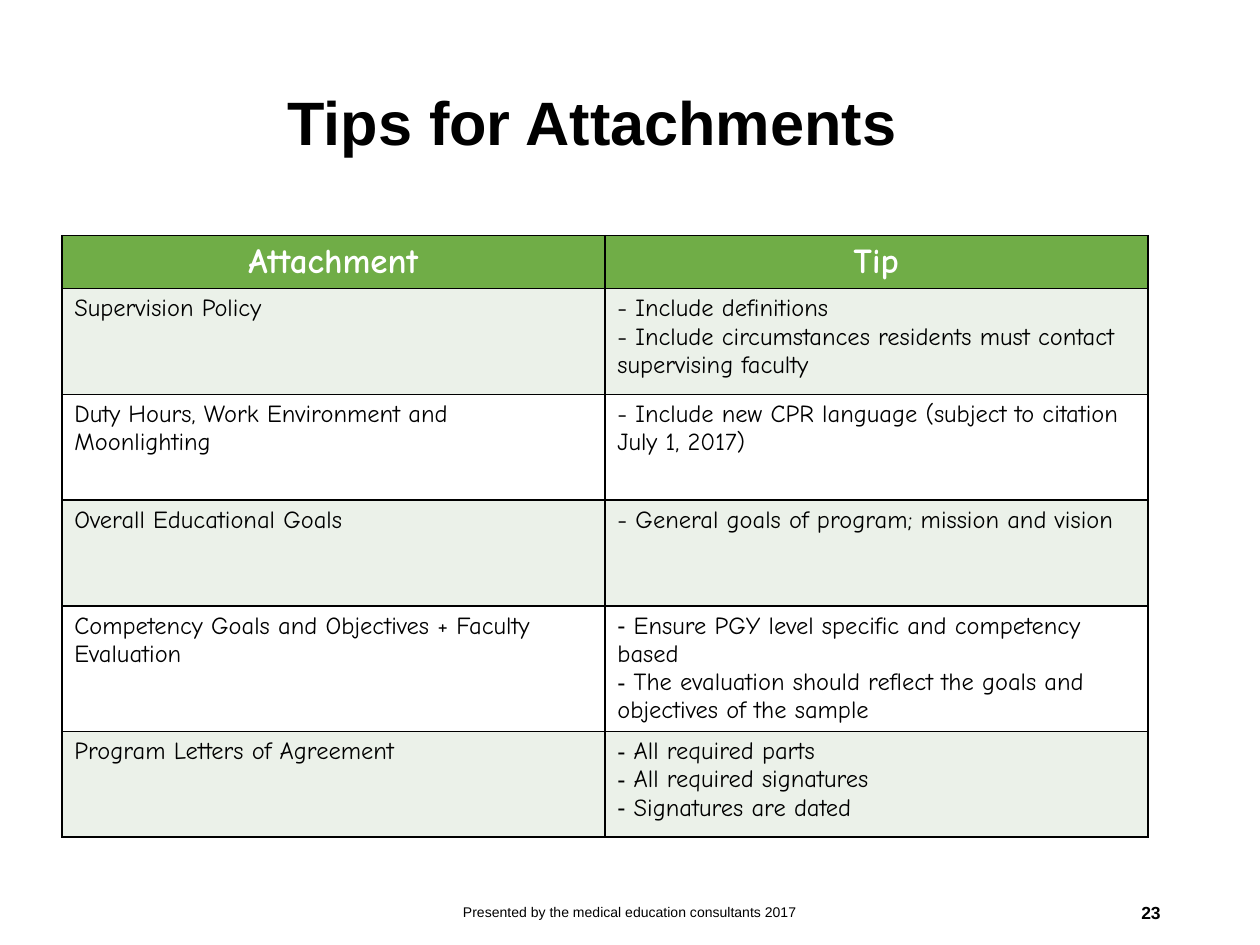
from dataclasses import dataclass

from lxml.etree import SubElement
from pptx import Presentation
from pptx.dml.color import RGBColor as RGB
from pptx.enum.text import MSO_ANCHOR as Anchor, MSO_AUTO_SIZE as AutoSize, PP_ALIGN as Align
from pptx.oxml.ns import qn
from pptx.util import Inches, Pt


@dataclass(frozen=True)
class Theme:
    sans: str = "Arial"
    hand: str = "Comic Neue"
    ink: str = "000000"
    paper: str = "FFFFFF"
    header: str = "70AD47"
    band: str = "EBF1E9"
    title_size: int = 35
    header_size: int = 20
    body_size: int = 14
    footer_size: int = 8
    number_size: int = 10
    border: int = 1


@dataclass(frozen=True)
class TipRow:
    attachment: str
    tips: tuple[str, ...]
    height: float = 0.84
    bullet: str = ""


THEME = Theme()
HEADER_HEIGHT = 0.42
COLUMN_WIDTH = 4.31
ROWS = (
    TipRow("Supervision Policy", (
        "- Include definitions",
        "- Include circumstances residents must contact supervising faculty")),
    TipRow("Duty Hours, Work Environment and Moonlighting", (
        "- Include new CPR language (subject to citation July 1, 2017)",)),
    TipRow("Overall Educational Goals", (
        "- General goals of program; mission and vision",)),
    TipRow("Competency Goals and Objectives + Faculty Evaluation", (
        " Ensure PGY level specific and competency based",
        " The evaluation should reflect the goals and objectives of the sample"),
        height=0.98, bullet="-"),
    TipRow("Program Letters of Agreement", (
        " All required parts",
        " All required signatures",
        " Signatures are dated"), bullet="-"),
)


def write(tf, *lines: str, size: int, font: str = THEME.sans, color: str = THEME.ink,
          bold: bool = False, align=Align.LEFT, bullet: str = "", spacing: float = 1.0) -> None:
    """Fill a text frame with one paragraph per line."""
    tf.word_wrap = True
    for i, line in enumerate(lines):
        p = tf.paragraphs[0] if i == 0 else tf.add_paragraph()
        p.alignment = align
        p.line_spacing = spacing
        if bullet:
            pPr = p._p.get_or_add_pPr()
            pPr.set("marL", "0")
            pPr.set("indent", "0")
            SubElement(pPr, qn("a:buFont"), typeface=THEME.sans)
            SubElement(pPr, qn("a:buChar"), char=bullet)
        r = p.add_run()
        r.text = line
        r.font.name = font
        r.font.size = Pt(size)
        r.font.bold = bold
        r.font.color.rgb = RGB.from_string(color)


def place(s, left: float, top: float, width: float, height: float) -> None:
    s.left, s.top, s.width, s.height = map(Inches, (left, top, width, height))


def style_cell(cell, fill: str) -> None:
    """Draw the four borders, which must precede the fill in the cell."""
    tcPr = cell._tc.get_or_add_tcPr()
    for side in "LRTB":
        ln = SubElement(tcPr, qn(f"a:ln{side}"), w=str(Pt(THEME.border)))
        SubElement(SubElement(ln, qn("a:solidFill")), qn("a:srgbClr"), val=THEME.ink)
    cell.fill.solid()
    cell.fill.fore_color.rgb = RGB.from_string(fill)


def add_tips_table(slide, left: float, top: float) -> None:
    heights = [HEADER_HEIGHT] + [row.height for row in ROWS]
    table = slide.shapes.add_table(
        len(heights), 2, Inches(left), Inches(top),
        Inches(2 * COLUMN_WIDTH), Inches(sum(heights))).table
    table.first_row = table.horz_banding = False
    for column in table.columns:
        column.width = Inches(COLUMN_WIDTH)
    for row, height in zip(table.rows, heights):
        row.height = Inches(height)

    for col, heading in enumerate(("Attachment", "Tip")):
        cell = table.cell(0, col)
        style_cell(cell, THEME.header)
        write(cell.text_frame, heading, size=THEME.header_size, font=THEME.hand,
              color=THEME.paper, bold=True, align=Align.CENTER)

    for i, row in enumerate(ROWS, start=1):
        fill = THEME.band if i % 2 else THEME.paper
        for col, (lines, bullet) in enumerate((((row.attachment,), ""), (row.tips, row.bullet))):
            cell = table.cell(i, col)
            style_cell(cell, fill)
            write(cell.text_frame, *lines, size=THEME.body_size, font=THEME.hand, bullet=bullet)


def add_footer(slide, text: str, left: float, width: float, **fmt) -> None:
    s = slide.shapes.add_textbox(0, 0, 0, 0)
    place(s, left, 7.04, width, 0.4)
    s.text_frame.vertical_anchor = Anchor.MIDDLE
    write(s.text_frame, text, **fmt)


def main() -> None:
    prs = Presentation()
    prs.slide_width, prs.slide_height = Inches(10), Inches(7.5)
    slide = prs.slides.add_slide(prs.slide_layouts[5])

    title = slide.shapes.title
    place(title, 2.18, 0.27, 7.14, 1.45)
    title.text_frame.auto_size = AutoSize.NONE
    title.text_frame.vertical_anchor = Anchor.MIDDLE
    write(title.text_frame, "Tips for Attachments", size=THEME.title_size, bold=True, spacing=0.9)

    add_tips_table(slide, 0.49, 1.87)
    add_footer(slide, "Presented by the medical education consultants 2017", 3.31, 3.38,
               size=THEME.footer_size, align=Align.CENTER)
    add_footer(slide, "23", 7.06, 2.25, size=THEME.number_size, bold=True, align=Align.RIGHT)
    prs.save("out.pptx")


if __name__ == "__main__":
    main()
